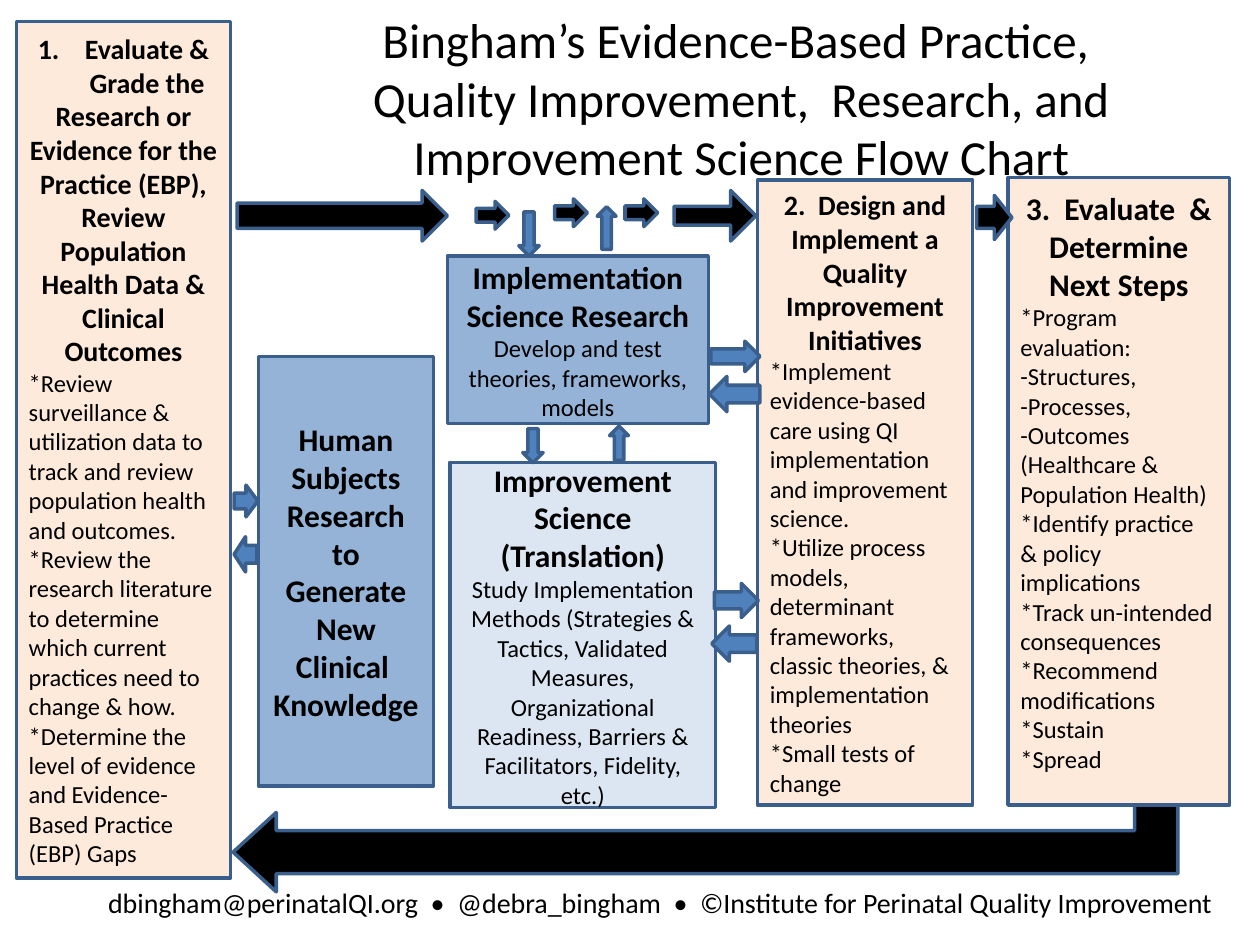
from pptx import Presentation
from pptx.dml.color import RGBColor
from pptx.enum.shapes import MSO_SHAPE as Shape
from pptx.enum.text import MSO_ANCHOR as Anchor, PP_ALIGN as Align
from pptx.oxml.ns import qn
from pptx.util import Cm, Pt
from lxml.etree import SubElement

COLORS = {
    "text": "000000",
    "outline": "3A5F8C",
    "step": "FDEADA",
    "research": "95B3D7",
    "translation": "DCE6F2",
    "flow": "000000",
    "exchange": "4F81BD",
}
FONT = "Calibri"

# left, top, width, height in centimetres
FLOW_ARROWS = [
    (4.78, 3.84, 4.24, 1.02),
    (9.6, 4.06, 0.66, 0.56),
    (11.18, 4.01, 0.66, 0.56),
    (12.6, 4.01, 0.66, 0.56),
    (19.69, 3.94, 0.71, 0.89),
]
EXCHANGE_ARROWS = [
    (Shape.RIGHT_ARROW, (4.72, 9.78, 0.48, 0.64)),
    (Shape.LEFT_ARROW, (4.72, 10.82, 0.46, 0.71)),
    (Shape.RIGHT_ARROW, (14.33, 6.88, 0.99, 0.61)),
    (Shape.LEFT_ARROW, (14.3, 7.59, 1.02, 0.71)),
    (Shape.RIGHT_ARROW, (14.4, 11.76, 0.89, 0.69)),
    (Shape.LEFT_ARROW, (14.35, 12.62, 0.91, 0.71)),
    (Shape.DOWN_ARROW, (10.54, 8.64, 0.41, 0.69)),
    (Shape.UP_ARROW, (12.29, 8.59, 0.38, 0.69)),
    (Shape.UP_ARROW, (12.04, 4.17, 0.38, 0.86)),
    (Shape.DOWN_ARROW, (10.46, 4.27, 0.41, 0.89)),
]


def rgb(name):
    return RGBColor.from_string(COLORS[name])


def cm_box(box):
    return [Cm(length) for length in box]


def format_paragraph(paragraph, size, align, bold=False):
    paragraph.alignment = align
    font = paragraph.font
    font.name, font.size, font.bold = FONT, Pt(size), bold
    font.color.rgb = rgb("text")


def number_paragraph(paragraph):
    """Turn on automatic numbering (1., 2., ...) with a hanging indent."""
    properties = paragraph._p.get_or_add_pPr()
    properties.set("marL", str(Cm(0.95)))
    properties.set("indent", str(-Cm(0.95)))
    SubElement(properties, qn("a:buFont"), typeface="+mj-lt")
    SubElement(properties, qn("a:buAutoNum"), type="arabicPeriod")


def add_block(slide, kind, box, fill, adjustments=()):
    shape = slide.shapes.add_shape(kind, *cm_box(box))
    shape.shadow.inherit = False
    shape.fill.solid()
    shape.fill.fore_color.rgb = rgb(fill)
    shape.line.color.rgb = rgb("outline")
    shape.line.width = Pt(2)
    for index, value in enumerate(adjustments):
        shape.adjustments[index] = value
    return shape


def add_panel(slide, box, fill, headings, body=(), heading_size=18,
              body_align=Align.LEFT, numbered=False):
    """Add a rectangle with bold centred headings above regular body text."""
    shape = add_block(slide, Shape.RECTANGLE, box, fill)
    frame = shape.text_frame
    frame.word_wrap = True
    frame.vertical_anchor = Anchor.MIDDLE
    frame.text = "\n".join([*headings, *body])
    if numbered:
        number_paragraph(frame.paragraphs[0])
    for index, paragraph in enumerate(frame.paragraphs):
        if index < len(headings):
            format_paragraph(paragraph, heading_size, Align.CENTER, bold=True)
        else:
            format_paragraph(paragraph, 14, body_align)
    return shape


def set_title(slide):
    title = slide.shapes.title
    title.left, title.top, title.width, title.height = cm_box((4.78, 0.43, 20.32, 3.07))
    frame = title.text_frame
    frame.word_wrap = True
    frame.vertical_anchor = Anchor.MIDDLE
    frame.text = ("Bingham’s Evidence-Based Practice, \v"
                  "Quality Improvement,  Research, and Improvement Science Flow Chart")
    format_paragraph(frame.paragraphs[0], 28, Align.CENTER)


def add_contact_line(slide):
    frame = slide.shapes.add_textbox(*cm_box((1.93, 17.73, 22.86, 0.94))).text_frame
    frame.word_wrap = True
    frame.text = ("dbingham@perinatalQI.org  •  @debra_bingham  •  "
                  "©Institute for Perinatal Quality Improvement")
    format_paragraph(frame.paragraphs[0], 16, Align.LEFT)


def add_step_panels(slide):
    add_panel(
        slide, (0.33, 0.43, 4.32, 17.27), "step",
        ["Evaluate & Grade the",
         "Research or Evidence for the Practice (EBP), Review Population "
         "Health Data & Clinical Outcomes"],
        ["*Review surveillance & utilization data to track and review "
         "population health  and outcomes.",
         "*Review the research literature to determine which current "
         "practices need to change & how.",
         "*Determine the level of evidence and Evidence-Based Practice (EBP) Gaps"],
        heading_size=16, numbered=True)
    add_panel(
        slide, (15.27, 3.63, 4.34, 12.6), "step",
        ["2.  Design and Implement a", "Quality Improvement Initiatives"],
        ["*Implement evidence-based care using QI implementation and "
         "improvement science.",
         "*Utilize process models, determinant frameworks, classic theories, "
         "& implementation theories",
         "*Small tests of change"],
        heading_size=16)
    evaluation = add_panel(
        slide, (20.32, 3.58, 4.47, 12.65), "step",
        ["3.  Evaluate  & Determine Next Steps"],
        ["*Program evaluation:", "-Structures,", "-Processes,",
         "-Outcomes (Healthcare & Population Health)",
         "*Identify practice  & policy implications",
         "*Track un-intended consequences", "*Recommend modifications",
         "*Sustain", "*Spread"])
    evaluation.text_frame.margin_bottom = Cm(0.54)


def add_research_panels(slide):
    add_panel(
        slide, (5.21, 7.19, 3.53, 8.66), "research",
        ["Human Subjects Research", "to Generate New Clinical  Knowledge"])
    add_panel(
        slide, (9.02, 5.16, 5.26, 3.38), "research",
        ["Implementation Science Research"],
        ["Develop and test theories, frameworks, models"],
        body_align=Align.CENTER)
    add_panel(
        slide, (9.07, 9.32, 5.36, 6.96), "translation",
        ["Improvement Science (Translation)"],
        ["Study Implementation Methods (Strategies & Tactics, Validated "
         "Measures, Organizational Readiness, Barriers & Facilitators, "
         "Fidelity, etc.)"],
        body_align=Align.CENTER)


def main():
    presentation = Presentation()
    presentation.slide_width, presentation.slide_height = Cm(25.4), Cm(19.05)
    slide = presentation.slides.add_slide(presentation.slide_layouts[5])

    set_title(slide)
    add_block(slide, Shape.LEFT_UP_ARROW, (4.7, 14.5, 19.41, 3.48), "flow",
              (0.25, 0.23, 0.25))
    add_block(slide, Shape.RIGHT_ARROW, (13.59, 3.84, 1.65, 1.02), "flow",
              (0.37, 0.5))
    add_step_panels(slide)
    add_research_panels(slide)
    for box in FLOW_ARROWS:
        add_block(slide, Shape.RIGHT_ARROW, box, "flow")
    for kind, box in EXCHANGE_ARROWS:
        add_block(slide, kind, box, "exchange")
    add_contact_line(slide)

    presentation.save("out.pptx")


if __name__ == "__main__":
    main()
